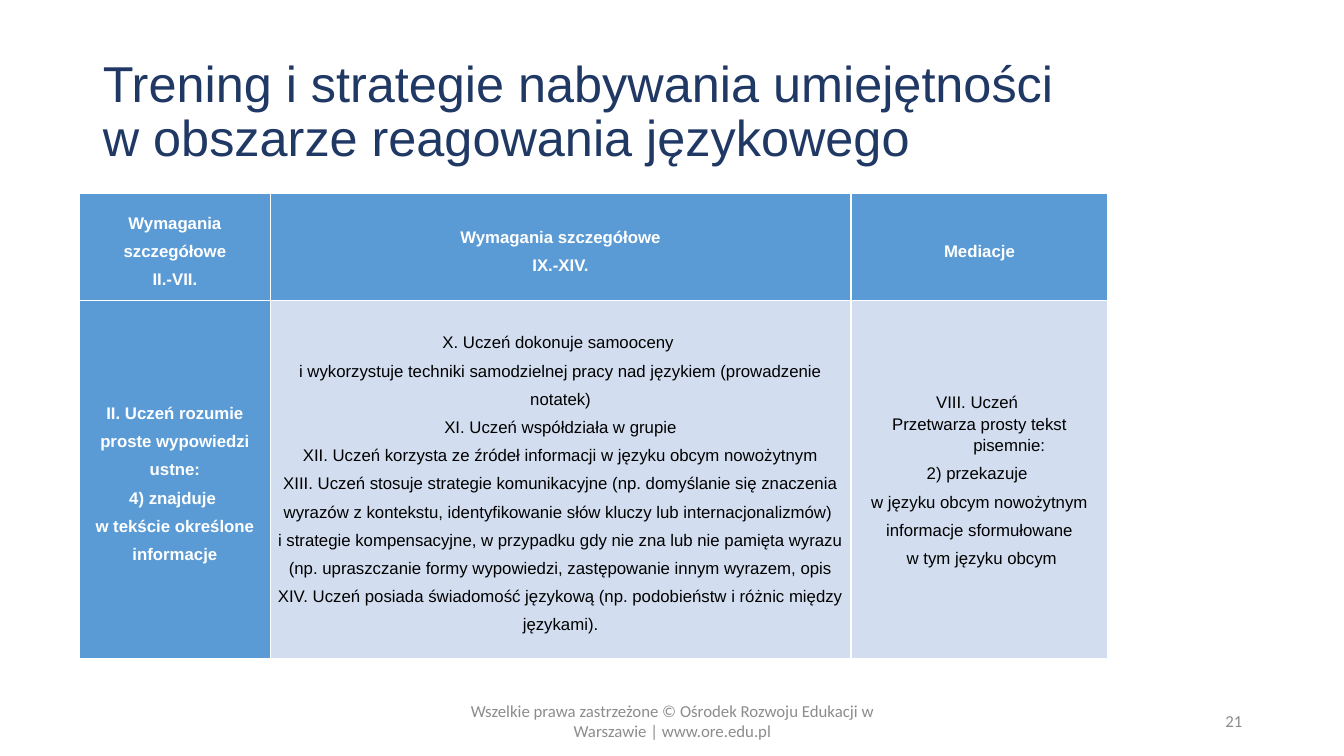
from pptx import Presentation
from pptx.dml.color import RGBColor
from pptx.enum.text import MSO_ANCHOR, PP_ALIGN
from pptx.util import Inches, Pt

COLORS = {
    "title": "203864",
    "header": "5B9BD5",
    "body": "D2DEEF",
    "light": "FFFFFF",
    "dark": "000000",
    "footer": "8C8C8C",
}
TITLE = "Trening i strategie nabywania umiejętności \nw obszarze reagowania językowego"
ROWS = [
    [
        ["Wymagania szczegółowe", "II.-VII."],
        ["Wymagania szczegółowe", "IX.-XIV."],
        ["Mediacje"],
    ],
    [
        [
            "II. Uczeń rozumie proste wypowiedzi ustne:",
            "4) znajduje ",
            "w tekście określone informacje",
        ],
        [
            "X. Uczeń dokonuje samooceny ",
            "i wykorzystuje techniki samodzielnej pracy nad językiem (prowadzenie notatek)",
            "XI. Uczeń współdziała w grupie",
            "XII. Uczeń korzysta ze źródeł informacji w języku obcym nowożytnym\n"
            "XIII. Uczeń stosuje strategie komunikacyjne (np. domyślanie się znaczenia "
            "wyrazów z kontekstu, identyfikowanie słów kluczy lub internacjonalizmów) ",
            "i strategie kompensacyjne, w przypadku gdy nie zna lub nie pamięta wyrazu "
            "(np. upraszczanie formy wypowiedzi, zastępowanie innym wyrazem, opis",
            "XIV. Uczeń posiada świadomość językową (np. podobieństw i różnic między językami).",
        ],
        [
            "VIII. Uczeń ",
            "Przetwarza prosty tekst pisemnie:",
            "2) przekazuje ",
            "w języku obcym nowożytnym informacje sformułowane",
            " w tym języku obcym",
        ],
    ],
]
HANGING = ROWS[1][2][:2]
COLUMN_WIDTHS = [1.89, 5.76, 2.55]
ROW_HEIGHTS = [1.06, 3.55]
FOOTERS = [
    ("Wszelkie prawa zastrzeżone © Ośrodek Rozwoju Edukacji w Warszawie | www.ore.edu.pl",
     4.42, 4.5, PP_ALIGN.CENTER),
    ("21", 9.42, 3, PP_ALIGN.RIGHT),
]


def color(name):
    return RGBColor.from_string(COLORS[name])


def set_font(para, name, size, color_name, bold=False):
    para.font.name = name
    para.font.size = Pt(size)
    para.font.bold = bold
    para.font.color.rgb = color(color_name)


def write_lines(frame, lines):
    """Put each line in its own paragraph and yield the paragraphs."""
    for index, line in enumerate(lines):
        para = frame.paragraphs[0] if index == 0 else frame.add_paragraph()
        para.text = line
        yield para


def fill_cell(cell, lines, is_header):
    cell.fill.solid()
    cell.fill.fore_color.rgb = color("header" if is_header else "body")
    cell.vertical_anchor = MSO_ANCHOR.MIDDLE
    cell.margin_left = cell.margin_right = Inches(0.07)
    cell.margin_top = cell.margin_bottom = 0
    for para in write_lines(cell.text_frame, lines):
        para.alignment = PP_ALIGN.CENTER
        para.line_spacing = 1.5
        if para.text in HANGING:
            para.line_spacing = 1.15
            properties = para._p.get_or_add_pPr()
            properties.set("marL", str(Inches(0.59)))
            properties.set("indent", str(-Inches(0.59)))
        set_font(para, "Arial", 12, "light" if is_header else "dark", is_header)


def add_title(page):
    title = page.shapes.title
    title.left, title.top = Inches(0.92), Inches(0.4)
    title.width, title.height = Inches(11.5), Inches(1.45)
    frame = title.text_frame
    frame.vertical_anchor = MSO_ANCHOR.MIDDLE
    for para in write_lines(frame, [TITLE]):
        para.alignment = PP_ALIGN.LEFT
        para.line_spacing = 0.9
        set_font(para, "Arial", 36, "title")


def add_requirements(page):
    table = page.shapes.add_table(
        len(ROW_HEIGHTS), len(COLUMN_WIDTHS), Inches(0.79), Inches(1.92),
        Inches(sum(COLUMN_WIDTHS)), Inches(sum(ROW_HEIGHTS))).table
    table.first_col = True
    for column, width in zip(table.columns, COLUMN_WIDTHS):
        column.width = Inches(width)
    for row, height in zip(table.rows, ROW_HEIGHTS):
        row.height = Inches(height)
    for r, row in enumerate(ROWS):
        for c, lines in enumerate(row):
            fill_cell(table.cell(r, c), lines, r == 0 or c == 0)


def add_footers(page):
    for text, left, width, alignment in FOOTERS:
        box = page.shapes.add_textbox(Inches(left), Inches(6.95), Inches(width), Inches(0.4))
        frame = box.text_frame
        frame.word_wrap = True
        frame.vertical_anchor = MSO_ANCHOR.MIDDLE
        for para in write_lines(frame, [text]):
            para.alignment = alignment
            set_font(para, "Calibri", 12, "footer")


def main():
    deck = Presentation()
    deck.slide_width, deck.slide_height = Inches(13.33), Inches(7.5)
    page = deck.slides.add_slide(deck.slide_layouts[5])
    add_title(page)
    add_requirements(page)
    add_footers(page)
    deck.save("out.pptx")


if __name__ == "__main__":
    main()
